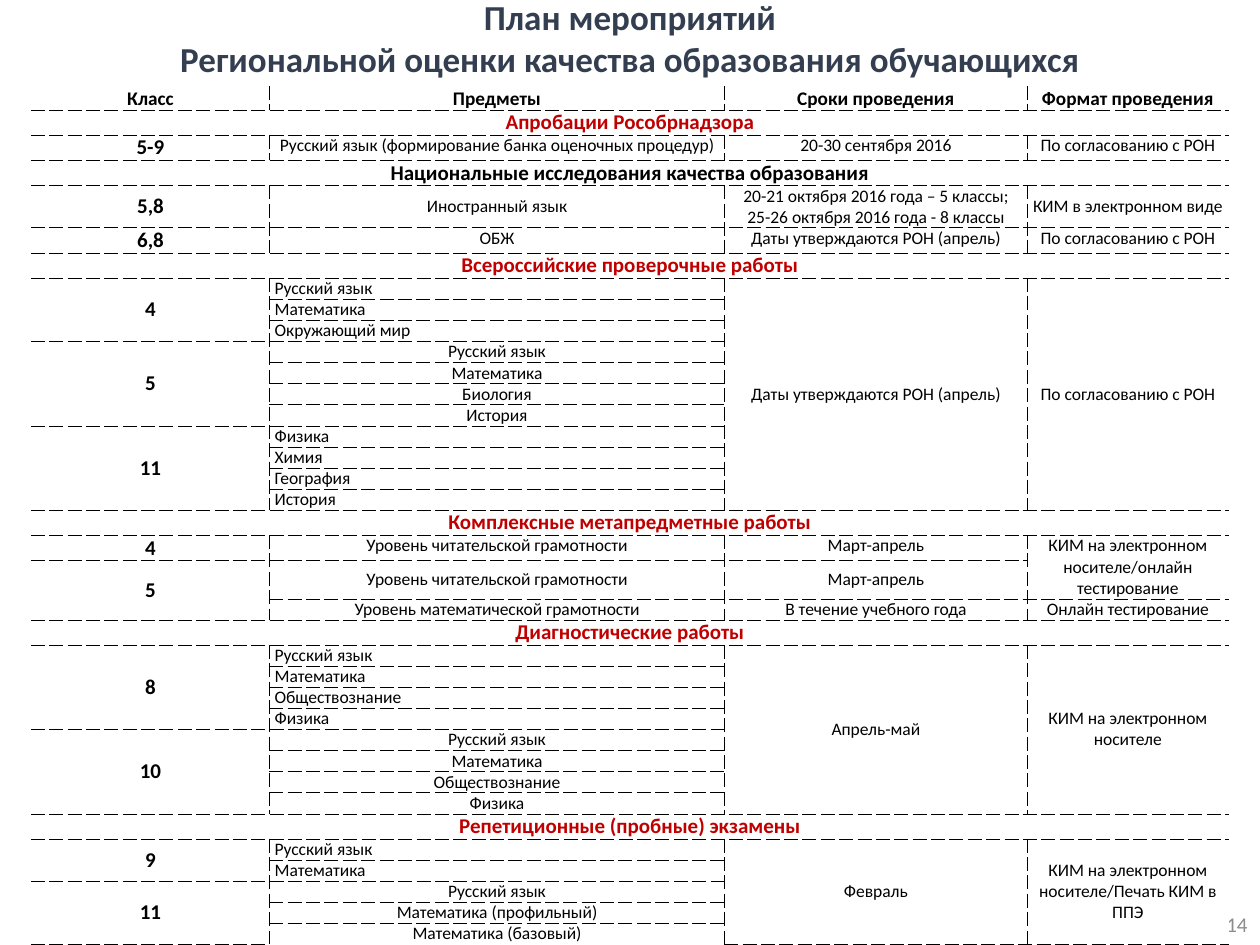
from lxml.etree import SubElement
from pptx import Presentation
from pptx.dml.color import RGBColor
from pptx.enum.text import MSO_ANCHOR, MSO_AUTO_SIZE, PP_ALIGN
from pptx.oxml.ns import qn
from pptx.util import Pt

LEFT, MID, RIGHT = PP_ALIGN.LEFT, PP_ALIGN.CENTER, PP_ALIGN.RIGHT
RED, BLACK = "C00000", "000000"
WIDTHS = [136, 260, 173, 115]
PLAIN, TALL = 12, 14.4


def color(text):
    return RGBColor.from_string(text)


def head(text, tone=RED):
    return [dict(cells=[text], high=TALL, tone=tone)]


def single(*cells, high=TALL):
    return [dict(cells=cells, high=high)]


def group(name, subjects, side=MID, dates=None, form=None):
    """One row per subject; None continues the cell above."""
    rows = [dict(cells=[None, item, None, None], high=PLAIN, side=side)
            for item in subjects.split("|")]
    rows[0]["cells"] = [name, rows[0]["cells"][1], dates, form]
    return rows


AGREED = "По согласованию с РОН"
APRIL = "Даты утверждаются РОН (апрель)"
READING = "Уровень читательской грамотности"
ROWS = [
    *single("Класс", "Предметы", "Сроки проведения", "Формат проведения", high=13.2),
    *head("Апробации Рособрнадзора"),
    *single("5-9", "Русский язык (формирование банка оценочных процедур)",
            "20-30 сентября 2016", AGREED),
    *head("Национальные исследования качества образования", BLACK),
    *single("5,8", "Иностранный язык",
            "20-21 октября 2016 года – 5 классы;\n25-26 октября 2016 года - 8 классы",
            "КИМ в электронном виде", high=24),
    *single("6,8", "ОБЖ", APRIL, AGREED),
    *head("Всероссийские проверочные работы"),
    *group("4", "Русский язык|Математика|Окружающий мир", LEFT, APRIL, AGREED),
    *group("5", "Русский язык|Математика|Биология|История"),
    *group("11", "Физика|Химия|География|История", LEFT),
    *head("Комплексные метапредметные работы"),
    *single("4", READING, "Март-апрель",
            "КИМ на электронном носителе/онлайн тестирование"),
    *single("5", READING, "Март-апрель", None, high=21.8),
    *single(None, "Уровень математической грамотности",
            "В течение учебного года", "Онлайн тестирование", high=PLAIN),
    *head("Диагностические работы"),
    *group("8", "Русский язык|Математика|Обществознание|Физика", LEFT,
           "Апрель-май", "КИМ на электронном носителе"),
    *group("10", "Русский язык|Математика|Обществознание|Физика"),
    *head("Репетиционные (пробные) экзамены"),
    *group("9", "Русский язык|Математика", LEFT, "Февраль",
           "КИМ на электронном носителе/Печать КИМ в ППЭ"),
    *group("11", "Русский язык|Математика (профильный)|Математика (базовый)"),
]


class Page:
    face = "Calibri"

    def __init__(self, slide):
        self.slide = slide

    def put(self, frame, text, side=MID, tone=BLACK, **form):
        """Fill a text frame and format its paragraphs."""
        frame.text = text
        for para in frame.paragraphs:
            para.alignment = side
            font = para.runs[0].font
            font.color.rgb = color(tone)
            for key, val in {"name": self.face, "bold": False, **form}.items():
                setattr(font, key, val)

    def title(self, text, box, **form):
        shape = self.slide.shapes.title
        for key, val in zip(("left", "top", "width", "height"), box):
            setattr(shape, key, Pt(val))
        frame = shape.text_frame
        frame.vertical_anchor = MSO_ANCHOR.TOP
        frame.auto_size = MSO_AUTO_SIZE.SHAPE_TO_FIT_TEXT
        self.put(frame, text, **form)

    def label(self, text, box, **form):
        frame = self.slide.shapes.add_textbox(*map(Pt, box)).text_frame
        frame.word_wrap = True
        frame.vertical_anchor = MSO_ANCHOR.MIDDLE
        self.put(frame, text, **form)

    def edge(self, cell, sides):
        """Draw dashed borders on the given sides, in the order L, R, T, B."""
        props = cell._tc.get_or_add_tcPr()
        for spot, side in enumerate(sides):
            line = SubElement(props, qn("a:ln" + side), w=str(Pt(0.25)))
            fill = SubElement(line, qn("a:solidFill"))
            SubElement(fill, qn("a:srgbClr"), val=BLACK)
            SubElement(line, qn("a:prstDash"), val="sysDash")
            props.insert(spot, line)

    def table(self, rows, widths, left, top):
        size = len(rows), len(widths)
        area = sum(widths), sum(row["high"] for row in rows)
        grid = self.slide.shapes.add_table(*size, *map(Pt, (left, top, *area))).table
        grid.first_row = grid.horz_banding = False
        for col, wide in zip(grid.columns, widths):
            col.width = Pt(wide)
        for r, row in enumerate(rows):
            grid.rows[r].height = Pt(row["high"])
            for c in range(size[1]):
                self.cell(grid, rows, r, c)

    def cell(self, grid, rows, r, c):
        cell, row = grid.cell(r, c), rows[r]
        cells, last = row["cells"], len(grid.columns) - 1
        whole = len(cells) == 1
        form = dict(margin_left=Pt(3), margin_right=Pt(3), margin_top=0, margin_bottom=0)
        for key, val in form.items():
            setattr(cell, key, val)
        cell.fill.background()
        shown = dict(L=c > 0 and not whole, R=c < last and not whole,
                     T=r > 0, B=r < len(rows) - 1)
        self.edge(cell, [side for side, on in shown.items() if on])
        if (whole and c) or cells[c] is None:
            return
        end = r + 1
        while (not whole and end < len(rows) and len(rows[end]["cells"]) > 1
               and rows[end]["cells"][c] is None):
            end += 1
        if whole or end > r + 1:
            cell.merge(grid.cell(end - 1, last if whole else c))
        if c == 0 or end > r + 1 or row["high"] > TALL:
            cell.vertical_anchor = MSO_ANCHOR.MIDDLE
        bold = r == 0 or c == 0
        self.put(cell.text_frame, cells[c], row.get("side", MID) if c == 1 else MID,
                 row.get("tone", BLACK), bold=bold,
                 size=Pt(11 if r == 0 else 12 if bold else 10))


def main():
    deck = Presentation()
    deck.slide_width, deck.slide_height = Pt(720), Pt(540)
    page = Page(deck.slides.add_slide(deck.slide_layouts[5]))
    page.title("План мероприятий\nРегиональной оценки качества образования обучающихся",
               (0, -6, 720, 56), tone="333F50", size=Pt(20), bold=True)
    page.label("14", (558, 513.5, 162, 29), side=RIGHT, tone="8C8C8C", size=Pt(12))
    page.table(ROWS, WIDTHS, 18, 49.5)
    deck.save("out.pptx")


if __name__ == "__main__":
    main()
